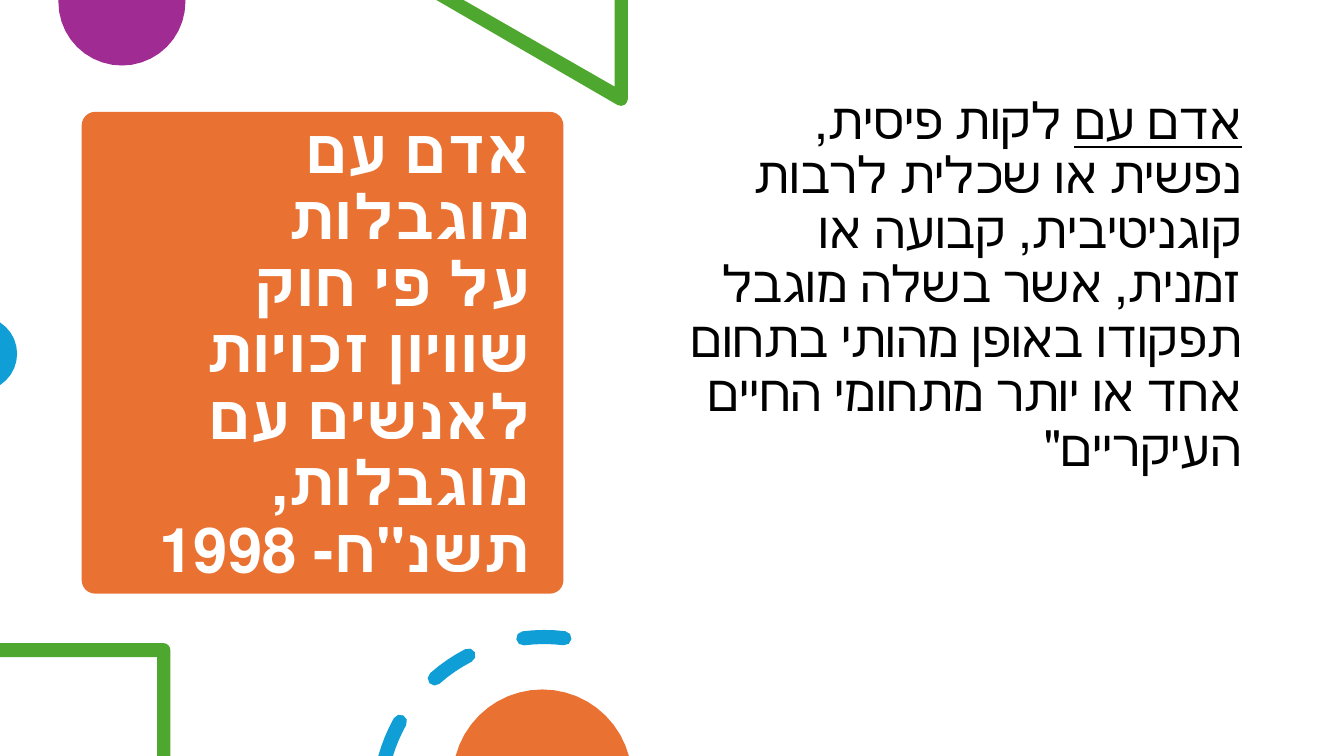
from math import cos, sin, radians
from pptx import Presentation
from pptx.dml.color import RGBColor
from pptx.enum.shapes import MSO_SHAPE
from pptx.enum.text import MSO_ANCHOR, PP_ALIGN
from pptx.util import Cm, Pt

# Content: each text is a list of lines, each line a list of (words, underlined)
TITLE = [
    [("אדם עם מוגבלות", False)],
    [("על פי חוק שוויון זכויות לאנשים עם מוגבלות, תשנ\"ח- 1998", False)],
]
BODY = [[
    ("אדם עם", True),
    (" לקות פיסית, נפשית או שכלית לרבות קוגניטיבית, קבועה או זמנית, "
     "אשר בשלה מוגבל תפקודו באופן מהותי בתחום אחד או יותר "
     "מתחומי החיים העיקריים\"", False),
]]
FONT = "Lato"
COLORS = {"orange": "E97132", "purple": "A02B93", "green": "4EA72E",
          "blue": "0F9ED5", "white": "FFFFFF", "black": "000000"}

# Page and boxes in cm: left, top, width, height
PAGE = (33.87, 19.05)
CARD = (2.06, 2.82, 12.14, 12.14)
TITLE_BOX = (2.67, 3.1, 10.95, 11.58)
BODY_BOX = (16.94, 2.29, 14.6, 13.59)

# The ornaments are laid out on a grid of 1 inch
UNIT = Cm(2.54)
FOOT = 7.5
RING = (5.4, 7.96)   # centre of the dashed ring
MID = 1.64           # its radius
HALF = 0.07          # half the width of a dash


def color(name):
    return RGBColor.from_string(COLORS[name])


def paint(shape, name):
    shape.shadow.inherit = False
    shape.fill.solid()
    shape.fill.fore_color.rgb = color(name)
    shape.line.fill.background()


def arc(x, y, r, start, end, steps=4):
    """Points on a circle; angles in degrees, clockwise from the right."""
    turns = [radians(start + (end - start) * i / steps) for i in range(steps + 1)]
    return [(x + r * cos(t), y + r * sin(t)) for t in turns]


def dash(start, end, cut=None):
    """A piece of the ring with round ends; cut gives the inner end angle
    where the page edge slices it."""
    x, y = RING

    def cap(angle, turn):
        t = radians(angle)
        return arc(x + MID * cos(t), y + MID * sin(t), HALF, turn, turn + 180)

    pts = arc(x, y, MID + HALF, start, end) + cap(end, end)
    pts += arc(x, y, MID - HALF, end, start if cut is None else cut)
    return pts if cut is not None else pts + cap(start, start + 180)


def outline(slide, rings, name):
    # Freeform points are whole numbers, so they are given in EMU
    first, *rest = [[(x * UNIT, y * UNIT) for x, y in ring] for ring in rings]
    maker = slide.shapes.build_freeform(*first[0])
    maker.add_line_segments(first[1:], close=True)
    for ring in rest:
        maker.move_to(*ring[0])
        maker.add_line_segments(ring[1:], close=True)
    paint(maker.convert_to_shape(), name)


def write(slide, lines, box, size, ink, bold=False, anchor=MSO_ANCHOR.TOP, after=0):
    frame = slide.shapes.add_textbox(*map(Cm, box)).text_frame
    frame.word_wrap = True
    frame.vertical_anchor = anchor
    para = frame.paragraphs[0]
    para.alignment = PP_ALIGN.RIGHT
    para.line_spacing = 0.9
    para.space_after = Pt(after)
    para._p.get_or_add_pPr().set("rtl", "1")
    for i, line in enumerate(lines):
        if i:
            para.add_line_break()
        for words, under in line:
            run = para.add_run()
            run.text = words
            font = run.font
            font.size, font.name, font.bold = Pt(size), FONT, bold
            font.underline = under
            font.color.rgb = color(ink)


def main():
    deck = Presentation()
    deck.slide_width, deck.slide_height = map(Cm, PAGE)
    slide = deck.slides.add_slide(deck.slide_layouts[6])

    # Title card
    card = slide.shapes.add_shape(MSO_SHAPE.ROUNDED_RECTANGLE, *map(Cm, CARD))
    card.adjustments[0] = 0.028
    paint(card, "orange")
    write(slide, TITLE, TITLE_BOX, 44, "white", bold=True, anchor=MSO_ANCHOR.MIDDLE)

    # Ornaments on the top and left edges
    outline(slide, [[(1.84, 0), *arc(1.21, 0.02, 0.63, 0, 180, 20), (0.58, 0)]],
            "purple")
    outline(slide, [[(6.23, 0), (6.1, 0), (6.1, 0.86), (4.6, 0), (4.33, 0),
                     *arc(6.16, 0.98, HALF, 115, 0)]], "green")
    outline(slide, [arc(-0.2, 3.51, 0.37, -57, 57, 10)], "blue")

    # Definition
    write(slide, BODY, BODY_BOX, 36, "black", after=6)

    # Ornaments on the bottom edge
    outline(slide, [[(0, 6.38), *arc(1.62, 6.45, HALF, -90, 0), (1.69, FOOT),
                     (1.56, FOOT), (1.56, 6.52), (0, 6.52)]], "green")
    outline(slide, [dash(195.65, 209.2, cut=197.05), dash(228.5, 242.7),
                    dash(262.7, 277)], "blue")
    outline(slide, [arc(5.38, 7.73, 0.89, 195, 345, 20)], "orange")

    deck.save("out.pptx")


if __name__ == "__main__":
    main()
